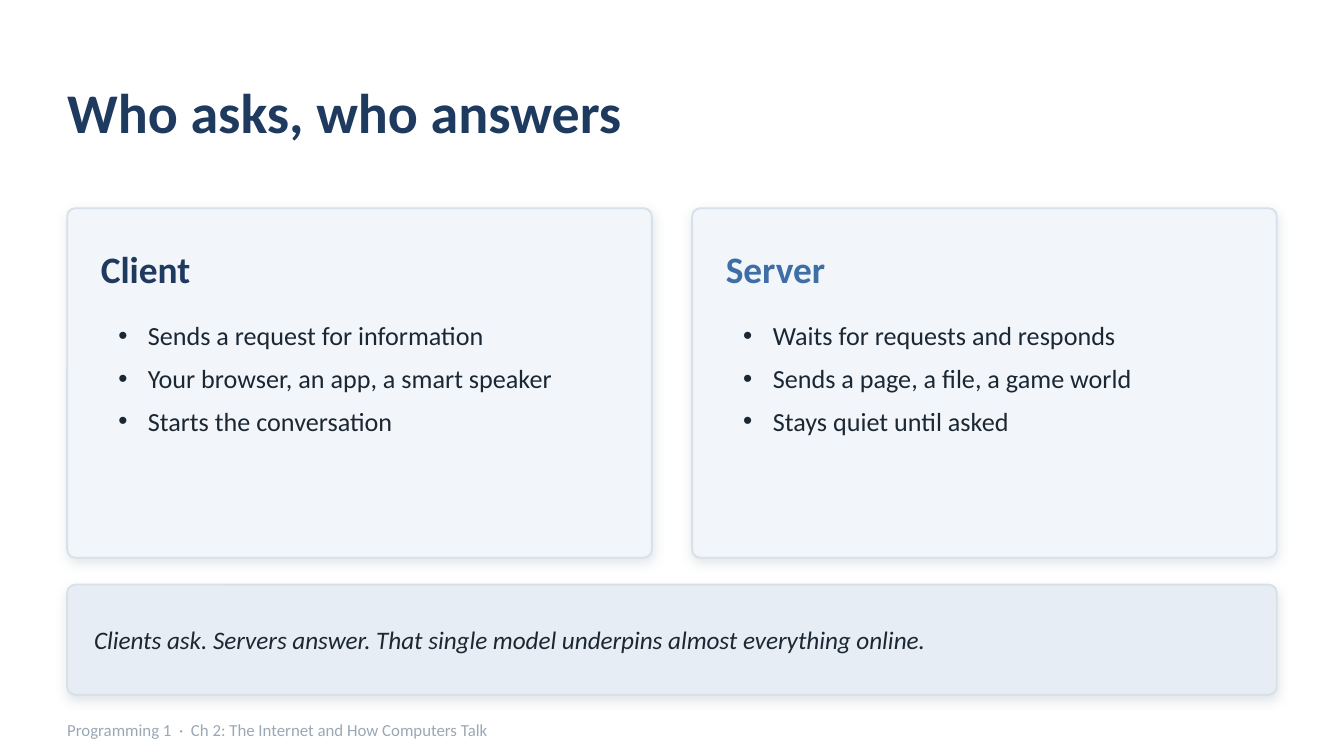
from dataclasses import dataclass

from lxml import etree
from pptx import Presentation
from pptx import util as u
from pptx.dml.color import RGBColor
from pptx.enum import shapes, text
from pptx.oxml import ns

Pt = u.Pt


@dataclass(frozen=True)
class Theme:
    font: str = "Calibri"
    background: str = "FFFFFF"
    navy: str = "1F3A5F"
    blue: str = "3D6EA5"
    ink: str = "1B2733"
    muted: str = "9AA8B6"
    card: str = "F2F5F9"
    banner: str = "E7EDF4"
    border: str = "D8E0E9"
    title_size: float = 30
    heading_size: float = 20
    body_size: float = 14
    banner_size: float = 13.5
    footer_size: float = 9


THEME = Theme()
MARGIN = 36
CONTENT_WIDTH = 648
CARD_GAP = 21.6
CARD_INSET = 18
BULLET_INDENT = 15.84
CORNER_RADIUS = 4.3


def place(shape, left, top, width, height):
    shape.left, shape.top = Pt(left), Pt(top)
    shape.width, shape.height = Pt(width), Pt(height)


def add_bullet(paragraph):
    properties = paragraph._p.get_or_add_pPr()
    properties.set("marL", str(Pt(BULLET_INDENT)))
    properties.set("indent", str(-Pt(BULLET_INDENT)))
    etree.SubElement(properties, ns.qn("a:buChar"), char="•")


def write_text(shape, lines, size, color, bold=False, italic=False,
               bullets=False, space_after=0, insets=(0, 0),
               anchor=text.MSO_ANCHOR.MIDDLE):
    """Fill a shape with one paragraph per line; insets are (sides, top and bottom)."""
    frame = shape.text_frame
    frame.word_wrap = True
    frame.auto_size = text.MSO_AUTO_SIZE.NONE
    frame.vertical_anchor = anchor
    frame.margin_left = frame.margin_right = Pt(insets[0])
    frame.margin_top = frame.margin_bottom = Pt(insets[1])
    for index, line in enumerate(lines):
        paragraph = frame.add_paragraph() if index else frame.paragraphs[0]
        if bullets:
            add_bullet(paragraph)
        paragraph.alignment = text.PP_ALIGN.LEFT
        paragraph.space_before = Pt(0)
        paragraph.space_after = Pt(space_after)
        run = paragraph.add_run()
        run.text = line
        font = run.font
        font.name, font.size = THEME.font, Pt(size)
        font.bold, font.italic = bold, italic
        font.color.rgb = RGBColor.from_string(color)


def add_label(slide, box, line, **text_format):
    label = slide.shapes.add_textbox(*map(Pt, box))
    write_text(label, [line], **text_format)


def add_soft_shadow(shape):
    shape.shadow.inherit = False
    effects = shape._element.spPr.find(ns.qn("a:effectLst"))
    shadow = etree.SubElement(
        effects, ns.qn("a:outerShdw"), blurRad=str(Pt(6)), dist=str(Pt(2)),
        dir="5400000", algn="bl", rotWithShape="0")
    color = etree.SubElement(shadow, ns.qn("a:srgbClr"), val=THEME.muted)
    etree.SubElement(color, ns.qn("a:alpha"), val="28000")


def add_panel(slide, box, fill):
    panel = slide.shapes.add_shape(
        shapes.MSO_SHAPE.ROUNDED_RECTANGLE, *map(Pt, box))
    panel.adjustments[0] = CORNER_RADIUS / min(box[2:])
    panel.fill.solid()
    panel.fill.fore_color.rgb = RGBColor.from_string(fill)
    panel.line.color.rgb = RGBColor.from_string(THEME.border)
    panel.line.width = Pt(1)
    add_soft_shadow(panel)


def add_title(slide, box, line):
    title = slide.shapes.title
    place(title, *box)
    write_text(title, [line], size=THEME.title_size, color=THEME.navy, bold=True)


def add_card(slide, box, body, heading, color, points):
    left, top, width, height = box
    inner_width = width - 2 * CARD_INSET
    add_panel(slide, box, THEME.card)
    add_label(slide, (left + CARD_INSET, top + 14.4, inner_width, 36), heading,
              size=THEME.heading_size, color=color, bold=True)
    place(body, left + CARD_INSET + 2.16, top + 56.16, inner_width, height - 72)
    write_text(body, points, size=THEME.body_size, color=THEME.ink,
               bullets=True, space_after=6, insets=(7.2, 3.6),
               anchor=text.MSO_ANCHOR.TOP)
    slide.shapes._spTree.append(body._element)  # bring the list above its card


def add_banner(slide, box, line):
    left, top, width, height = box
    add_panel(slide, box, THEME.banner)
    add_label(slide, (left + 14.4, top + 3.6, width - 28.8, height - 7.2), line,
              size=THEME.banner_size, color=THEME.ink, italic=True)


def add_footer(slide, box, line):
    add_label(slide, box, line, size=THEME.footer_size, color=THEME.muted)


def build_comparison_slide(presentation):
    slide = presentation.slides.add_slide(presentation.slide_layouts[3])
    slide.background.fill.solid()
    slide.background.fill.fore_color.rgb = RGBColor.from_string(THEME.background)

    add_title(slide, (MARGIN, 28.8, CONTENT_WIDTH, 61.2), "Who asks, who answers")

    cards = [
        ("Client", THEME.navy, ["Sends a request for information",
                                "Your browser, an app, a smart speaker",
                                "Starts the conversation"]),
        ("Server", THEME.blue, ["Waits for requests and responds",
                                "Sends a page, a file, a game world",
                                "Stays quiet until asked"]),
    ]
    bodies = list(slide.placeholders)[1:]
    card_width = (CONTENT_WIDTH - CARD_GAP) / len(cards)
    for index, (body, card) in enumerate(zip(bodies, cards)):
        left = MARGIN + index * (card_width + CARD_GAP)
        add_card(slide, (left, 111.6, card_width, 187.2), body, *card)

    add_banner(slide, (MARGIN, 313.2, CONTENT_WIDTH, 59.04),
               "Clients ask. Servers answer. That single model underpins "
               "almost everything online.")
    add_footer(slide, (MARGIN, 381.6, 576, 18.72),
               "Programming 1  ·  Ch 2: The Internet and How Computers Talk")


def main():
    presentation = Presentation()
    presentation.slide_width, presentation.slide_height = Pt(720), Pt(405)
    build_comparison_slide(presentation)
    presentation.save("out.pptx")


if __name__ == "__main__":
    main()
